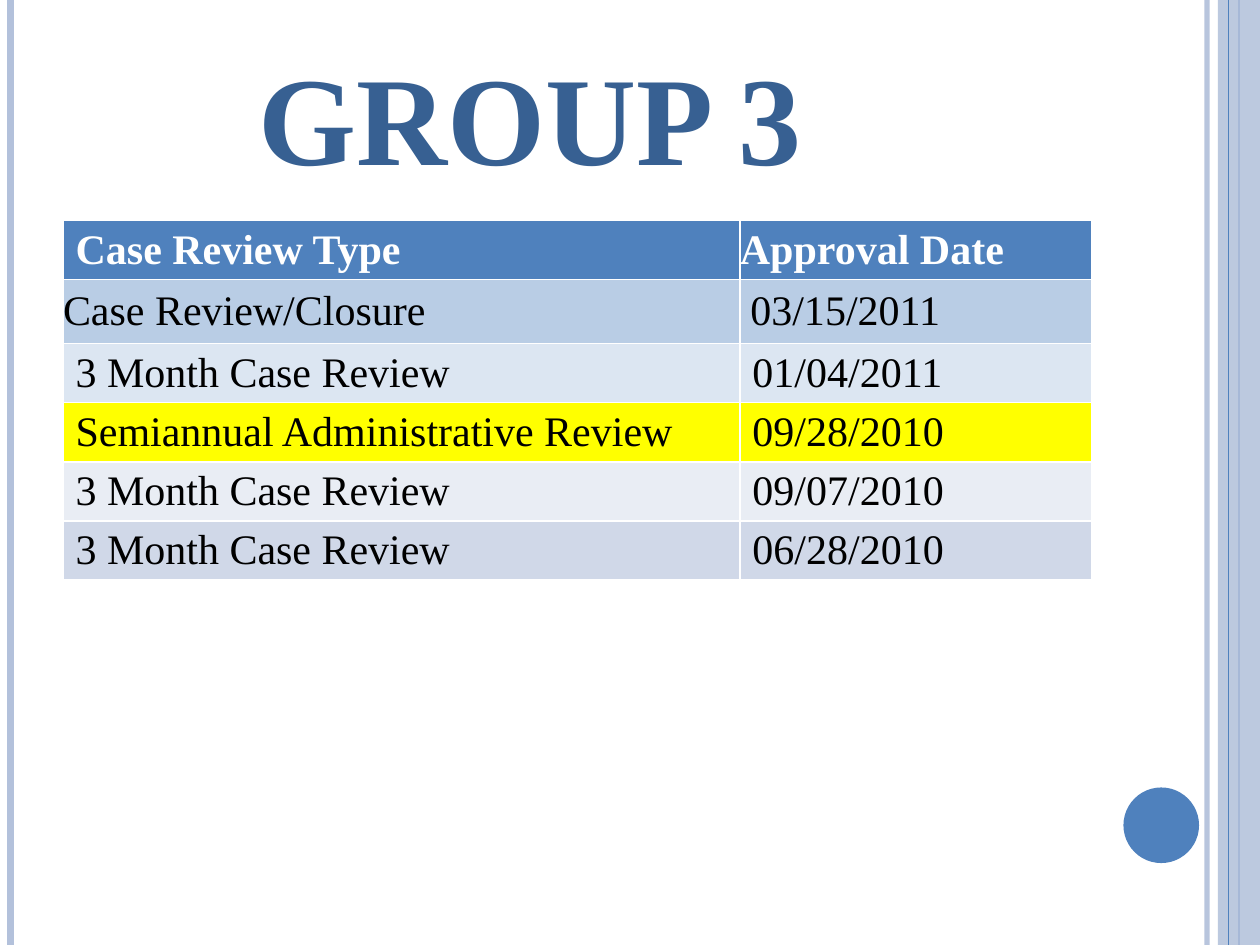
from lxml import etree
from pptx import Presentation
from pptx.dml.color import RGBColor
from pptx.enum.shapes import MSO_CONNECTOR as Connector, MSO_SHAPE as Shape
from pptx.enum.text import MSO_ANCHOR as Anchor, MSO_AUTO_SIZE as AutoSize, PP_ALIGN as Align
from pptx.oxml.ns import qn
from pptx.util import Pt

FONT = "Times New Roman"
WHITE = RGBColor(0xFF, 0xFF, 0xFF)
BLACK = RGBColor(0x00, 0x00, 0x00)
BLUE = RGBColor(0x4F, 0x81, 0xBD)
PALE_BLUE = RGBColor(0xB3, 0xC1, 0xDB)
TITLE_BLUE = RGBColor(0x37, 0x60, 0x92)
YELLOW = RGBColor(0xFF, 0xFF, 0x00)
WIDTH, HEIGHT = 720, 540


def set_alpha(shape, percent):
    """Make the shape's solid colours partly transparent."""
    for color in shape._element.spPr.iter(qn("a:srgbClr")):
        etree.SubElement(color, qn("a:alpha")).set("val", str(percent * 1000))


def add_span(para, text, size, color, bold):
    span = para.add_run()
    span.text = text
    span.font.name = FONT
    span.font.size = Pt(size)
    span.font.color.rgb = color
    span.font.bold = bold


deck = Presentation()
deck.slide_width, deck.slide_height = Pt(WIDTH), Pt(HEIGHT)
page = deck.slides.add_slide(deck.slide_layouts[5])

# Side stripes: x, line width, colour, opacity; the band lies below the last line
stripes = [
    (689.75, 3, PALE_BLUE, 93),
    (6, 4.5, PALE_BLUE, 100),
    (708, 1.5, BLUE, 100),
    (None, None, None, None),
    (702, 0.75, BLUE, 100),
]
for x, width, color, opacity in stripes:
    if x is None:
        band = page.shapes.add_shape(Shape.RECTANGLE, Pt(696), 0, Pt(24), Pt(HEIGHT))
        band.shadow.inherit = False
        band.fill.solid()
        band.fill.fore_color.rgb = PALE_BLUE
        band.line.fill.background()
        set_alpha(band, 87)
        continue
    stripe = page.shapes.add_connector(Connector.STRAIGHT, Pt(x), 0, Pt(x), Pt(HEIGHT))
    stripe.line.width = Pt(width)
    stripe.line.color.rgb = color
    if opacity < 100:
        set_alpha(stripe, opacity)
    etree.SubElement(stripe._element.spPr, qn("a:effectLst"))

dot = page.shapes.add_shape(Shape.OVAL, Pt(642), Pt(450), Pt(43.2), Pt(43.2))
dot.shadow.inherit = False
dot.fill.solid()
dot.fill.fore_color.rgb = BLUE
dot.line.fill.background()

# Review table: type, date, row fill
reviews = [
    ("Case Review Type", "Approval Date", BLUE),
    ("Case Review/Closure", "03/15/2011", RGBColor(0xB9, 0xCD, 0xE5)),
    ("3 Month Case Review", "01/04/2011", RGBColor(0xDC, 0xE6, 0xF2)),
    ("Semiannual Administrative Review", "09/28/2010", YELLOW),
    ("3 Month Case Review", "09/07/2010", RGBColor(0xE9, 0xED, 0xF4)),
    ("3 Month Case Review", "06/28/2010", RGBColor(0xD0, 0xD8, 0xE8)),
]
# Left margins of the cells that are set flush and centred vertically
flush_cells = {(0, 1): 0, (1, 0): 0, (1, 1): 6}

table = page.shapes.add_table(len(reviews), 2, Pt(36), Pt(126), Pt(588), Pt(182.6)).table
table.columns[0].width, table.columns[1].width = Pt(386.8), Pt(201.2)
for row, (*texts, fill) in enumerate(reviews):
    table.rows[row].height = Pt(36.6 if row == 1 else 29.2)
    for column, text in enumerate(texts):
        cell = table.cell(row, column)
        cell.fill.solid()
        cell.fill.fore_color.rgb = fill
        if (row, column) in flush_cells:
            cell.vertical_anchor = Anchor.MIDDLE
            cell.margin_left = Pt(flush_cells[row, column])
            cell.margin_top = cell.margin_right = cell.margin_bottom = 0
        header = row == 0
        add_span(cell.text_frame.paragraphs[0], text, 24, WHITE if header else BLACK, header)

title = page.shapes.title
title.left, title.top, title.width, title.height = Pt(66), Pt(18), Pt(474), Pt(94.5)
frame = title.text_frame
frame.word_wrap = True
frame.auto_size = AutoSize.NONE
frame.vertical_anchor = Anchor.BOTTOM
para = frame.paragraphs[0]
para.alignment = Align.CENTER
add_span(para, "GROUP 3", 72, TITLE_BLUE, True)

deck.save("out.pptx")
